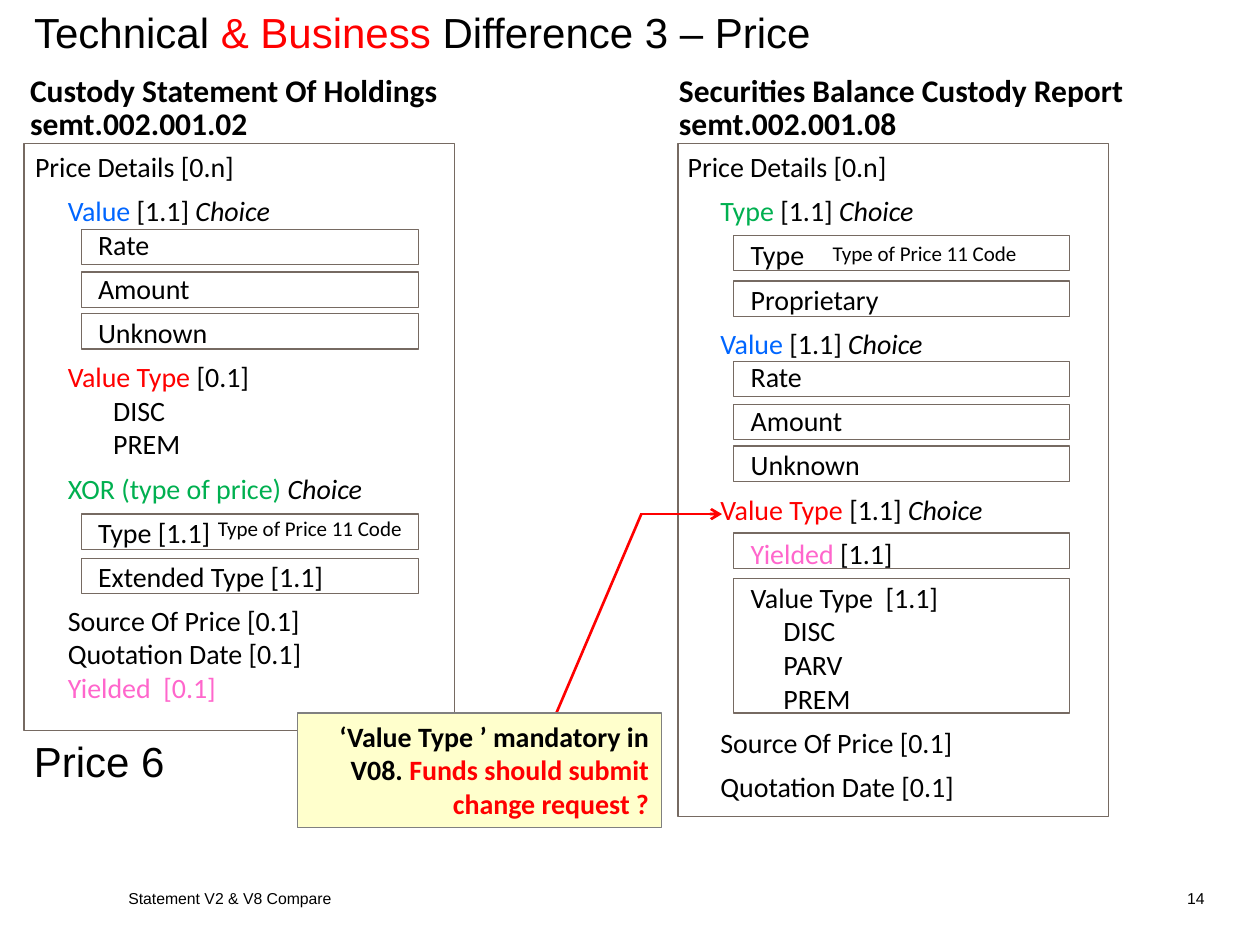
"""Build a slide that sets the price blocks of two custody messages side by side."""
from typing import NamedTuple

from lxml.etree import SubElement as Sub
from pptx import Presentation as Deck
from pptx.dml.color import RGBColor as Rgb
from pptx.enum.shapes import MSO_CONNECTOR as Conn, MSO_SHAPE as Form
from pptx.enum.text import MSO_ANCHOR as Anchor, MSO_AUTO_SIZE as Fit, PP_ALIGN as Align
from pptx.oxml.ns import qn
from pptx.util import Inches, Pt

COLS, ROWS = 100, 75
INK = {"k": "000000", "r": "FF0000", "b": "0066FF", "g": "00B050", "p": "FF66CC"}
EDGE = "766A62"
CALIBRI = {"name": "Calibri", "size": Pt(16)}
HEAD = {"name": "Calibri", "size": Pt(18), "bold": True}
SMALL = {"name": "Calibri", "size": Pt(12)}
BIG = {"name": "Arial", "size": Pt(24)}
FOOT = {"name": "Arial", "size": Pt(9)}
NOTE = {**CALIBRI, "bold": True}
TIGHT = {"line_spacing": Pt(19)}
GROW = {"auto_size": Fit.SHAPE_TO_FIT_TEXT, "word_wrap": False}
MID = {"vertical_anchor": Anchor.MIDDLE, "word_wrap": True}


class Box(NamedTuple):
    """Place and size in grid columns and rows."""
    x: float
    y: float
    w: float
    h: float


class Row(NamedTuple):
    """One line: runs split by bars, each with an optional ink or i key and a colon."""
    text: str
    after: int = 0
    tabs: tuple = ()


class Panel(NamedTuple):
    """One message: heading, frame, text, inner boxes and code label."""
    head: list
    spot: Box
    frame: Box
    body: Box
    rows: list
    cells: list
    code: Box


MAIN, TOP, SUB = (0.26, 1.19, 2.38), (0.26, 2.38), (0.26, 0.5, 1.19, 2.38)
LIST, DEEP = (0.26, 0.62, 1.19, 2.38), (0.26, 0.5, 0.76, 1.19, 2.38)


def sub(text: str) -> Row:
    """Return a spaced row with the stops of the inner boxes."""
    return Row(text, 6, SUB)


START = Row("Price Details [0.n]\t", 6, TOP)
UNITS = [sub(f"\t\t{name}") for name in ("Rate", "Amount", "Unknown")]


def inner(x: float, tops: list) -> list:
    """Return equal inner boxes at the given tops."""
    return [Box(x, top, 26.7, 2.8) for top in tops]


PANELS = [
    Panel([Row("Custody Statement Of Holdings"), Row("semt.002.001.02")],
          Box(1.4, 5.5, 34.6, 6.3), Box(1.9, 11.4, 34.2, 46.6), Box(1.8, 11.4, 28.3, 47.1),
          [START, Row("\t|b:Value |[1.1] |i:Choice", 0, MAIN), *UNITS,
           Row("\t|r:Value Type |[0.1]", 0, MAIN),
           Row("\t\tDISC", 0, LIST), Row("\t\tPREM", 6, LIST),
           sub("\t|g:XOR (type of price) |i:Choice"),
           sub("\t\tType [1.1]"), sub("\t\tExtended Type [1.1]"),
           Row("\tSource Of Price [0.1]", 0, MAIN), Row("\tQuotation Date [0.1]", 0, MAIN),
           Row("\t|p:Yielded  [0.1]", 0, MAIN)],
          inner(6.5, [18.2, 21.6, 24.9, 40.8, 44.3]), Box(16.3, 40.4, 16.8, 3)),
    Panel([Row("Securities Balance Custody Report"), Row("semt.002.001.08")],
          Box(52.9, 5.5, 37.6, 6.3), Box(53.8, 11.4, 34.2, 53.4), Box(53.6, 11.4, 26, 53.3),
          [START, Row("\t|g:Type| [1.1] |i:Choice", 6, MAIN),
           sub("\t\tType"), sub("\t\tProprietary"),
           Row("b:\tValue |[1.1]|i: Choice", 0, MAIN), *UNITS,
           sub("\t|r:Value Type| [1.1] |i:Choice"), sub("\t\t|p:Yielded| [1.1]"),
           Row("\t\tValue Type  [1.1]", 0, SUB), Row("\t\t\tDISC", 0, DEEP),
           Row("\t\t\tPARV", 0, DEEP), Row("\t\t\tPREM", 6, DEEP),
           sub("\tSource Of Price [0.1]"), sub("\tQuotation Date [0.1]")],
          inner(58.2, [18.7, 22.3, 28.7, 32.1, 35.4, 42.3]) + [Box(58.2, 45.9, 26.7, 10.7)],
          Box(65.1, 18.6, 16.8, 3)),
]

deck = Deck()
deck.slide_width, deck.slide_height = Inches(10), Inches(7.5)
slide = deck.slides.add_slide(deck.slide_layouts[5])
shapes = slide.shapes


def across(n: float) -> int:
    """Turn grid columns into a length."""
    return round(deck.slide_width * n / COLS)


def down(n: float) -> int:
    """Turn grid rows into a length."""
    return round(deck.slide_height * n / ROWS)


def place(box: Box) -> tuple:
    """Turn a grid box into left, top, width and height."""
    return across(box.x), down(box.y), across(box.w), down(box.h)


def put(thing, form: dict) -> None:
    """Set each format value on a thing."""
    for key, value in form.items():
        setattr(thing, key, value)


def tint(fmt, ink: str) -> None:
    """Give a fill, line or font colour from a hex string."""
    fmt.rgb = Rgb.from_string(ink)


def write(shape, rows: list, font: dict, frame: dict, para: dict) -> None:
    """Fill a shape with rows of styled runs."""
    text = shape.text_frame
    put(text, frame)
    for n, row in enumerate(rows):
        line = text.add_paragraph() if n else text.paragraphs[0]
        put(line, {"space_after": Pt(row.after), **para})
        if row.tabs:
            stops = Sub(line._p.get_or_add_pPr(), qn("a:tabLst"))
            for stop in row.tabs:
                Sub(stops, qn("a:tab"), pos=str(Inches(stop)), algn="l")
        for part in row.text.split("|"):
            key, _, words = part.rpartition(":")
            run = line.add_run()
            run.text = words
            put(run.font, {**font, "italic": key == "i"})
            tint(run.font.color, INK.get(key, INK["k"]))


def label(box: Box, rows: list, font: dict, frame: dict = GROW, para: dict = {}) -> None:
    """Add a text box."""
    write(shapes.add_textbox(*place(box)), rows, font, frame, para)


def rect(box: Box, edge: str = EDGE, fill: str = ""):
    """Add a thin-edged rectangle, filled when a colour is given."""
    shape = shapes.add_shape(Form.RECTANGLE, *place(box))
    shape.shadow.inherit = False
    shape.line.width = Pt(0.75)
    tint(shape.line.color, edge)
    if fill:
        shape.fill.solid()
        tint(shape.fill.fore_color, fill)
    else:
        shape.fill.background()
    return shape


def link(x1: float, y1: float, x2: float, y2: float, tip: bool = False) -> None:
    """Add a red line, with an arrowhead at its end if asked."""
    line = shapes.add_connector(Conn.STRAIGHT, across(x1), down(y1), across(x2), down(y2))
    line.line.width = Pt(1.5)
    tint(line.line.color, INK["r"])
    if tip:
        Sub(line.line._get_or_add_ln(), qn("a:tailEnd"), type="arrow")
    Sub(line._element.spPr, qn("a:effectLst"))


def panel(item: Panel) -> None:
    """Draw one message."""
    rect(item.frame)
    label(item.body, item.rows, CALIBRI)
    for cell in item.cells:
        rect(cell)
    label(item.code, [Row("Type of Price 11 Code")], SMALL)
    label(item.spot, item.head, HEAD, para=TIGHT)


title = shapes.title
put(title, dict(zip(("left", "top", "width", "height"), place(Box(1.7, 0, 97.3, 5.6)))))
write(title, [Row("Technical |r:& Business |Difference 3 – Price")], BIG,
      {"vertical_anchor": Anchor.TOP, "auto_size": Fit.NONE}, {"alignment": Align.LEFT})
label(Box(9.2, 70, 62.1, 2.5), [Row("Statement V2 & V8 Compare")], FOOT, MID)
label(Box(88.3, 70, 8.3, 2.5), [Row("14")], FOOT, MID, {"alignment": Align.RIGHT})
for item in PANELS:
    panel(item)
label(Box(1.7, 57.9, 12.5, 5), [Row("Price 6")], BIG)
link(50.8, 40.8, 57.3, 40.8, True)
link(43, 59.3, 50.9, 40.8)
note = rect(Box(23.6, 56.6, 28.9, 9.1), "808080", "FFFFCC")
write(note, [Row("‘Value Type ’ mandatory in V08. |r:Funds should submit change request ?")], NOTE,
      {**GROW, "word_wrap": True, "vertical_anchor": Anchor.TOP}, {"alignment": Align.RIGHT})
deck.save("out.pptx")
